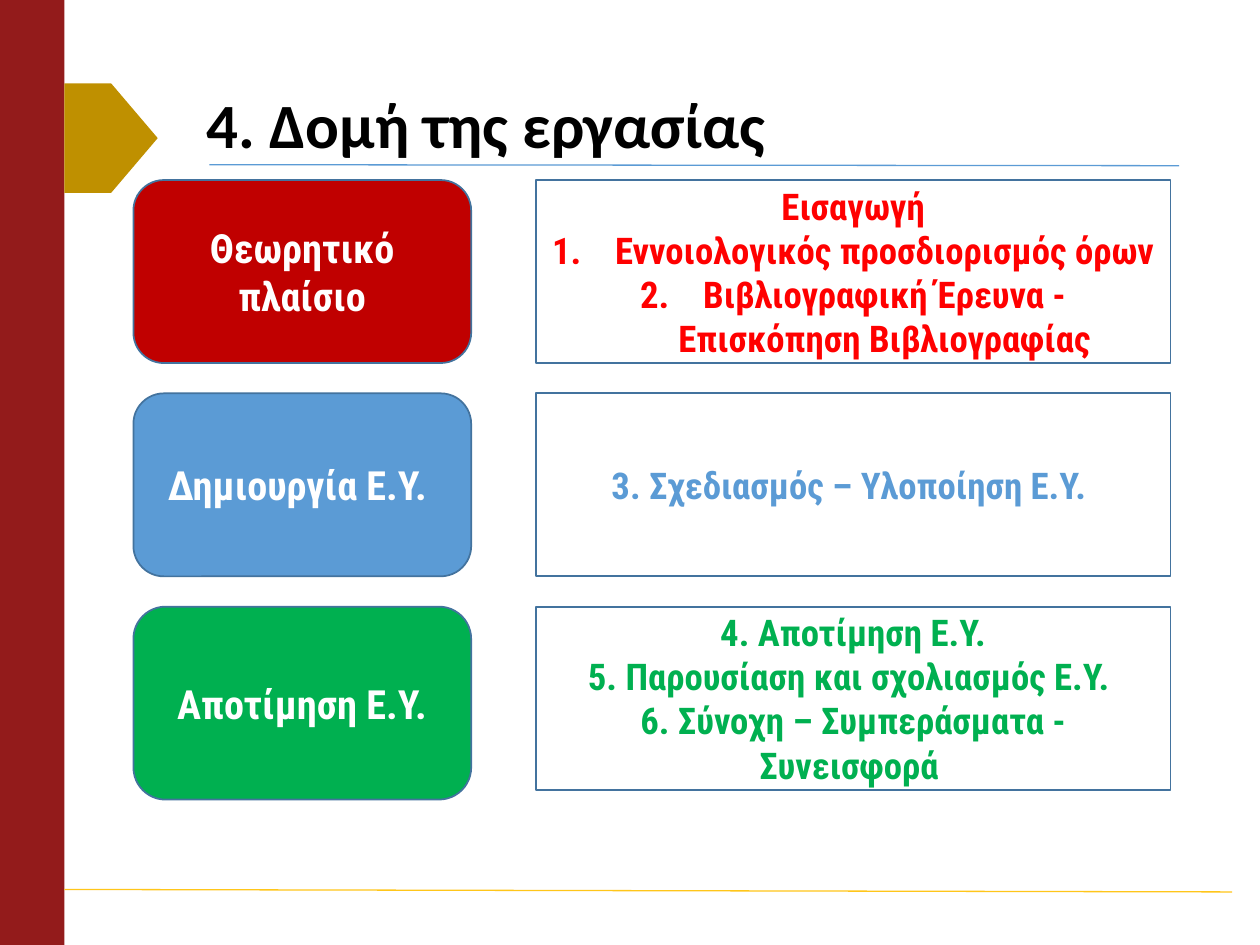
from lxml import etree
from pptx import Presentation
from pptx.dml.color import RGBColor
from pptx.enum.shapes import MSO_CONNECTOR, MSO_SHAPE
from pptx.enum.text import MSO_ANCHOR, MSO_AUTO_SIZE, PP_ALIGN
from pptx.oxml.ns import qn
from pptx.util import Cm, Pt

RECTANGLE = MSO_SHAPE.RECTANGLE
ROUNDED = MSO_SHAPE.ROUNDED_RECTANGLE
PENTAGON = MSO_SHAPE.PENTAGON
STRAIGHT = MSO_CONNECTOR.STRAIGHT
MIDDLE = MSO_ANCHOR.MIDDLE
NO_AUTOSIZE = MSO_AUTO_SIZE.NONE
LEFT = PP_ALIGN.LEFT
CENTER = PP_ALIGN.CENTER

BLACK = RGBColor(0x00, 0x00, 0x00)
WHITE = RGBColor(0xFF, 0xFF, 0xFF)
MAROON = RGBColor(0x93, 0x1B, 0x1B)
OCHRE = RGBColor(0xBF, 0x90, 0x00)
GOLD = RGBColor(0xFF, 0xC6, 0x1A)
DARK_RED = RGBColor(0xC0, 0x00, 0x00)
RED = RGBColor(0xFF, 0x00, 0x00)
BLUE = RGBColor(0x5B, 0x9B, 0xD5)
GREEN = RGBColor(0x00, 0xB0, 0x50)
OUTLINE = RGBColor(0x43, 0x73, 0x9E)

TITLE_FONT = "Calibri"
BODY_FONT = "Roboto Condensed"
FIRST_TOP = 3.63
ROW_STEP = 4.3
ROW_HEIGHT = 3.69
NUMBER_INDENT = 1.27

SECTIONS = [
    {
        "phase": "Θεωρητικό πλαίσιο",
        "fill": DARK_RED,
        "color": RED,
        "phase_height": ROW_HEIGHT,
        "lines": ["Εισαγωγή"],
        "numbered": [
            "Εννοιολογικός προσδιορισμός όρων",
            "Βιβλιογραφική Έρευνα - Επισκόπηση Βιβλιογραφίας",
        ],
    },
    {
        "phase": "Δημιουργία Ε.Υ. ",
        "fill": BLUE,
        "color": BLUE,
        "phase_height": ROW_HEIGHT,
        "lines": ["3. Σχεδιασμός – Υλοποίηση Ε.Υ. "],
        "numbered": [],
    },
    {
        "phase": "Αποτίμηση Ε.Υ.",
        "fill": GREEN,
        "color": GREEN,
        "phase_height": 3.89,
        "lines": [
            "4. Αποτίμηση Ε.Υ.",
            "5. Παρουσίαση και σχολιασμός Ε.Υ. ",
            "6. Σύνοχη – Συμπεράσματα - Συνεισφορά ",
        ],
        "numbered": [],
    },
]


def set_values(target, values):
    for name, value in values.items():
        setattr(target, name, value)


def add_box(slide, kind, place, fill, outline=None):
    box = slide.shapes.add_shape(kind, *[Cm(length) for length in place])
    box.shadow.inherit = False
    box.fill.solid()
    box.fill.fore_color.rgb = fill
    if outline is None:
        box.line.fill.background()
    else:
        box.line.color.rgb = outline
        box.line.width = Pt(1)
    return box


def add_rule(slide, ends, color):
    rule = slide.shapes.add_connector(STRAIGHT, *[Cm(length) for length in ends])
    rule.line.color.rgb = color
    rule.line.width = Pt(0.75)
    etree.SubElement(rule._element.spPr, qn("a:effectLst"))


def write_span(para, text, font_name, size, color):
    span = para.add_run()
    span.text = text
    set_values(span.font, {"name": font_name, "size": Pt(size), "bold": True})
    span.font.color.rgb = color


def number_paragraph(para):
    properties = para._p.get_or_add_pPr()
    properties.set("marL", str(Cm(NUMBER_INDENT)))
    properties.set("indent", str(-Cm(NUMBER_INDENT)))
    etree.SubElement(properties, qn("a:buFont"), typeface="+mj-lt")
    etree.SubElement(properties, qn("a:buAutoNum"), type="arabicPeriod")


def write_lines(box, lines, numbered, size, color):
    frame = box.text_frame
    set_values(frame, {"word_wrap": True, "vertical_anchor": MIDDLE})
    for index, text in enumerate(lines + numbered):
        para = frame.add_paragraph() if index else frame.paragraphs[0]
        para.alignment = CENTER
        if index >= len(lines):
            number_paragraph(para)
        write_span(para, text, BODY_FONT, size, color)


def add_title(slide, text):
    title = slide.shapes.title
    set_values(title, {"left": Cm(3.91), "top": Cm(1.52),
                       "width": Cm(19.99), "height": Cm(2.13)})
    frame = title.text_frame
    set_values(frame, {"word_wrap": True, "vertical_anchor": MIDDLE,
                       "auto_size": NO_AUTOSIZE})
    para = frame.paragraphs[0]
    set_values(para, {"alignment": LEFT, "line_spacing": 0.9})
    write_span(para, text, TITLE_FONT, 36, BLACK)


def add_section(slide, top, section):
    phase = add_box(slide, ROUNDED, (2.69, top, 6.81, section["phase_height"]),
                    section["fill"], OUTLINE)
    write_lines(phase, [section["phase"]], [], 23, WHITE)
    content = add_box(slide, RECTANGLE, (10.8, top, 12.8, ROW_HEIGHT), WHITE, OUTLINE)
    write_lines(content, section["lines"], section["numbered"], 21, section["color"])


def main():
    deck = Presentation()
    set_values(deck, {"slide_width": Cm(25.4), "slide_height": Cm(19.05)})
    slide = deck.slides.add_slide(deck.slide_layouts[5])
    add_box(slide, RECTANGLE, (0, 0, 1.3, 19.05), MAROON)
    add_rule(slide, (4.22, 3.32, 23.77, 3.34), BLUE)
    add_rule(slide, (1.3, 17.93, 24.84, 17.98), GOLD)
    add_box(slide, PENTAGON, (1.3, 1.68, 1.88, 2.21), OCHRE)
    add_title(slide, "4. Δομή της εργασίας")
    for row, section in enumerate(SECTIONS):
        add_section(slide, FIRST_TOP + row * ROW_STEP, section)
    deck.save("out.pptx")


if __name__ == "__main__":
    main()
